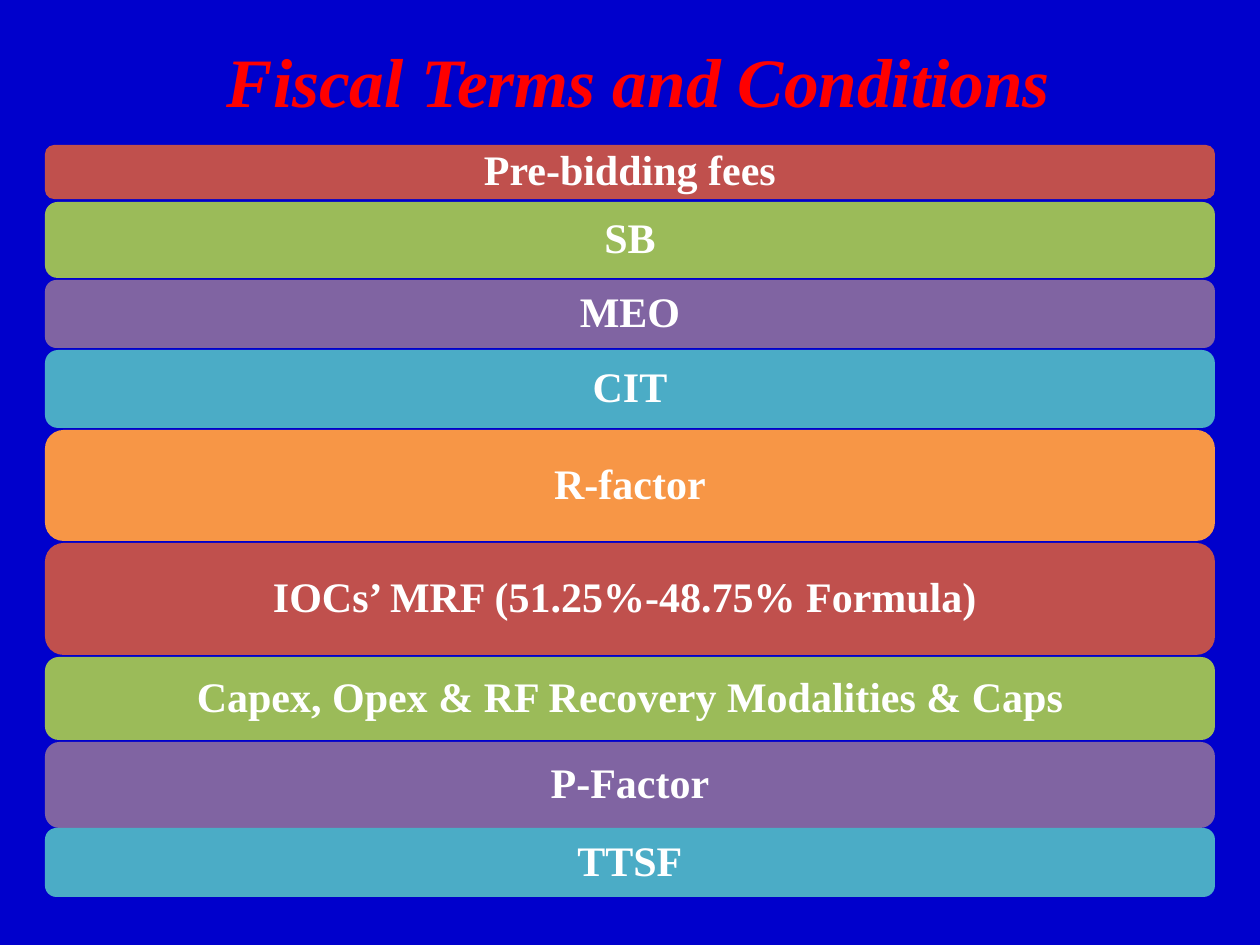
from itertools import cycle

from pptx import Presentation
from pptx.dml.color import RGBColor
from pptx.enum.shapes import MSO_SHAPE
from pptx.enum.text import MSO_ANCHOR, MSO_AUTO_SIZE, PP_ALIGN
from pptx.util import Inches, Pt

PX = Inches(1) / 126
FONT = "Times New Roman"
BLUE = RGBColor(0x00, 0x00, 0xCC)
TITLE_RED = RGBColor(0xFF, 0x00, 0x00)
WHITE = RGBColor(0xFF, 0xFF, 0xFF)
RED = RGBColor(0xC0, 0x50, 0x4D)
GREEN = RGBColor(0x9B, 0xBB, 0x59)
PURPLE = RGBColor(0x80, 0x64, 0xA2)
TEAL = RGBColor(0x4B, 0xAC, 0xC6)
ORANGE = RGBColor(0xF7, 0x96, 0x46)


def place(sp, *box):
    sp.left, sp.top, sp.width, sp.height = (round(v * PX) for v in box)


def add_text(p, text, size, color):
    p.alignment = PP_ALIGN.CENTER
    r = p.add_run()
    r.text = text
    r.font.name = FONT
    r.font.size = Pt(size)
    r.font.bold = True
    r.font.color.rgb = color
    return r


prs = Presentation()
prs.slide_width = Inches(10)
prs.slide_height = Inches(7.5)
s = prs.slides.add_slide(prs.slide_layouts[5])
s.background.fill.solid()
s.background.fill.fore_color.rgb = BLUE

title = s.shapes.title
place(title, 63, 38, 1134, 157)
tf = title.text_frame
tf.auto_size = MSO_AUTO_SIZE.NONE
tf.vertical_anchor = MSO_ANCHOR.TOP
tf.margin_top = 0
r = add_text(tf.paragraphs[0], " Fiscal Terms and Conditions", 39.6, TITLE_RED)
r.font.italic = True

terms = [
    ("Pre-bidding fees", 145, 54),
    ("SB", 202, 76),
    ("MEO", 280, 68),
    ("CIT", 350, 78),
    ("R-factor", 430, 111),
    ("IOCs’ MRF (51.25%-48.75% Formula) ", 543, 112),
    ("Capex, Opex & RF Recovery Modalities & Caps", 657, 83),
    ("P-Factor", 742, 86),
    ("TTSF", 828, 69),
]
for (text, top, height), color in zip(terms, cycle([RED, GREEN, PURPLE, TEAL, ORANGE])):
    sp = s.shapes.add_shape(MSO_SHAPE.ROUNDED_RECTANGLE, 0, 0, 0, 0)
    place(sp, 45, top, 1170, height)
    sp.shadow.inherit = False
    sp.fill.solid()
    sp.fill.fore_color.rgb = color
    sp.line.fill.background()
    tf = sp.text_frame
    tf.word_wrap = True
    tf.vertical_anchor = MSO_ANCHOR.MIDDLE
    tf.margin_top = tf.margin_bottom = 0
    p = tf.paragraphs[0]
    p.line_spacing = 0.9
    add_text(p, text, 24, WHITE)

prs.save("out.pptx")
